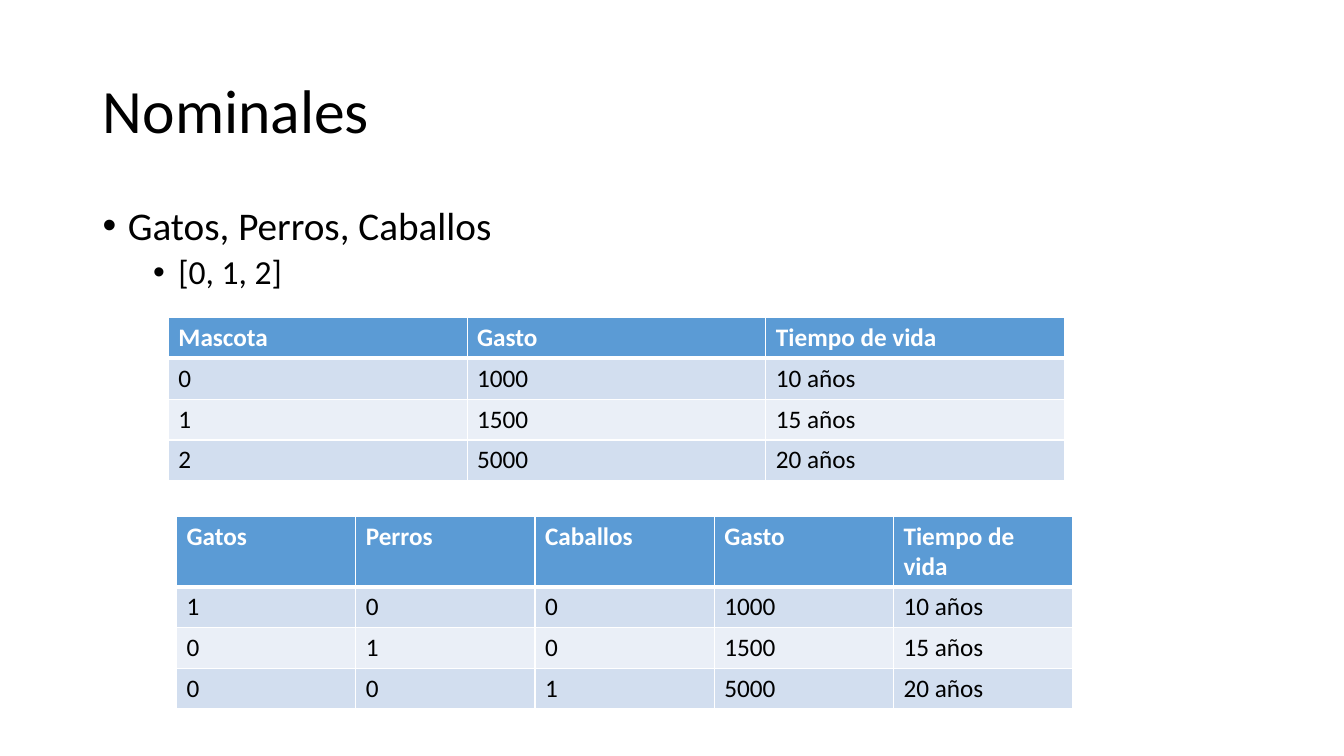
from lxml.etree import SubElement
from pptx import Presentation
from pptx.dml.color import RGBColor
from pptx.enum.text import MSO_ANCHOR, MSO_AUTO_SIZE, PP_ALIGN
from pptx.oxml.ns import qn
from pptx.util import Inches, Pt

TITLE = "Nominales"
BULLETS = [
    {"text": "Gatos, Perros, Caballos", "size": 28, "level": 0, "indent": 0.25, "before": 0},
    {"text": "[0, 1, 2]", "size": 24, "level": 1, "indent": 0.75, "before": 5},
]
ENCODED_PETS = [
    ("Mascota", "Gasto", "Tiempo de vida"),
    ("0", "1000", "10 años"),
    ("1", "1500", "15 años"),
    ("2", "5000", "20 años"),
]
ONE_HOT_PETS = [
    ("Gatos", "Perros", "Caballos", "Gasto", "Tiempo de vida"),
    ("1", "0", "0", "1000", "10 años"),
    ("0", "1", "0", "1500", "15 años"),
    ("0", "0", "1", "5000", "20 años"),
]
WIDTH, HEIGHT = 13.33, 7.5
MARGIN, CONTENT_WIDTH = 0.92, 11.5
TABLE_WIDTH, ROW_HEIGHT = 8.89, 0.405
TABLES = [
    {"rows": ENCODED_PETS, "left": 1.67, "top": 3.15, "header": ROW_HEIGHT},
    {"rows": ONE_HOT_PETS, "left": 1.75, "top": 5.12, "header": 0.7},
]
FONT, BLACK, WHITE = "Calibri", "000000", "FFFFFF"
HEADER_FILL, BAND_FILLS = "5B9BD5", ("EAEFF7", "D2DEEF")


def color(value):
    """Turn a hex string into a colour."""
    return RGBColor.from_string(value)


def format_font(font, size, value, bold=False):
    """Apply the slide font with a size, colour and weight."""
    for name, setting in {"name": FONT, "size": Pt(size), "bold": bold}.items():
        setattr(font, name, setting)
    font.color.rgb = color(value)


def add_title(slide):
    """Fill and place the title placeholder."""
    title = slide.shapes.title
    box = {"left": MARGIN, "top": 0.4, "width": CONTENT_WIDTH, "height": 1.45}
    for name, length in box.items():
        setattr(title, name, Inches(length))
    frame = title.text_frame
    frame.text = TITLE
    frame.auto_size = MSO_AUTO_SIZE.NONE
    frame.vertical_anchor = MSO_ANCHOR.MIDDLE
    paragraph = frame.paragraphs[0]
    paragraph.alignment = PP_ALIGN.LEFT
    paragraph.line_spacing = 0.9
    format_font(paragraph.runs[0].font, 44, BLACK)


def add_bullets(slide):
    """Write the two-level bullet list."""
    box = slide.shapes.add_textbox(
        Inches(MARGIN), Inches(2), Inches(CONTENT_WIDTH), Inches(4.76))
    frame = box.text_frame
    frame.word_wrap = True
    for index, bullet in enumerate(BULLETS):
        paragraph = frame.add_paragraph() if index else frame.paragraphs[0]
        paragraph.level = bullet["level"]
        paragraph.line_spacing = 0.9
        paragraph.space_before = Pt(bullet["before"])
        properties = paragraph._p.get_or_add_pPr()
        properties.set("marL", str(Inches(bullet["indent"])))
        properties.set("indent", str(Inches(-0.25)))
        SubElement(properties, qn("a:buFont"), typeface="Arial")
        SubElement(properties, qn("a:buChar"), char="•")
        run = paragraph.add_run()
        run.text = bullet["text"]
        format_font(run.font, bullet["size"], BLACK)


def add_borders(cell, row):
    """Draw white cell borders, thick between header and body."""
    widths = {"L": 1, "R": 1, "T": 3 if row == 1 else 1, "B": 3 if row == 0 else 1}
    properties = cell._tc.get_or_add_tcPr()
    for side, width in widths.items():
        line = SubElement(properties, qn(f"a:ln{side}"), w=str(Pt(width)))
        fill = SubElement(line, qn("a:solidFill"))
        SubElement(fill, qn("a:srgbClr"), val=WHITE)


def add_pet_table(slide, rows, left, top, header):
    """Build one banded table with equal columns."""
    count = len(rows[0])
    height = header + ROW_HEIGHT * (len(rows) - 1)
    table = slide.shapes.add_table(
        len(rows), count, Inches(left), Inches(top),
        Inches(TABLE_WIDTH), Inches(height)).table
    for column in table.columns:
        column.width = Inches(TABLE_WIDTH / count)
    for row, values in enumerate(rows):
        table.rows[row].height = Inches(ROW_HEIGHT if row else header)
        for column, value in enumerate(values):
            cell = table.cell(row, column)
            cell.text = value
            add_borders(cell, row)
            cell.fill.solid()
            cell.fill.fore_color.rgb = color(BAND_FILLS[row % 2] if row else HEADER_FILL)
            font = cell.text_frame.paragraphs[0].runs[0].font
            format_font(font, 18, BLACK if row else WHITE, bold=row == 0)


def main():
    """Create the slide and save it."""
    presentation = Presentation()
    presentation.slide_width = Inches(WIDTH)
    presentation.slide_height = Inches(HEIGHT)
    slide = presentation.slides.add_slide(presentation.slide_layouts[5])
    add_title(slide)
    add_bullets(slide)
    for table in TABLES:
        add_pet_table(slide, **table)
    presentation.save("out.pptx")


if __name__ == "__main__":
    main()
